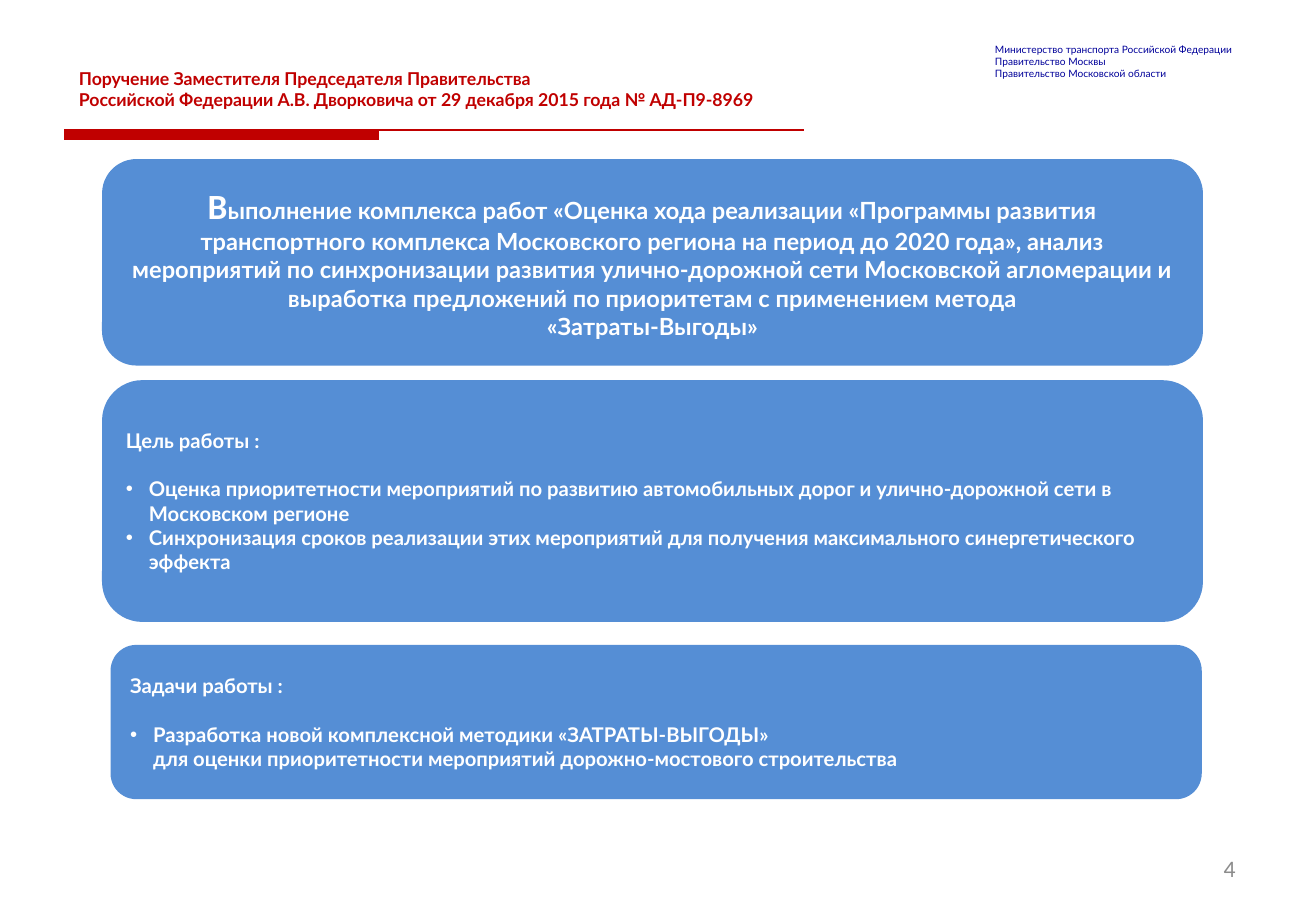
from dataclasses import dataclass

from lxml.etree import SubElement
from pptx import Presentation
from pptx.dml.color import RGBColor
from pptx.enum.shapes import MSO_CONNECTOR as Connector, MSO_SHAPE as Preset
from pptx.enum.text import MSO_ANCHOR as Anchor, MSO_AUTO_SIZE as AutoSize, PP_ALIGN as Align
from pptx.oxml.ns import qn
from pptx.util import Emu, Pt

PX = 9144
RED, NAVY, GREY, WHITE, BLUE = "C00000", "000099", "8C8C8C", "FFFFFF", "558ED5"
BULLET_INDENT = 19


@dataclass(frozen=True)
class Span:
    text: str
    size: float
    color: str = WHITE
    font: str = "Lato"
    bold: bool = True


@dataclass(frozen=True)
class Para:
    spans: tuple[Span, ...]
    align: Align = Align.LEFT
    bullet: bool = False
    before: float = 0


@dataclass(frozen=True)
class Area:
    left: int
    top: int
    width: int
    height: int


@dataclass(frozen=True)
class Panel:
    area: Area
    paras: tuple[Para, ...]
    margins: tuple[int, int] = (10, 5)


@dataclass(frozen=True)
class Rule:
    left: int
    right: int
    y: int
    weight: float


def px(value: int) -> Emu:
    return Emu(value * PX)


def rgb(color: str) -> RGBColor:
    return RGBColor.from_string(color)


def add_bullet(paragraph) -> None:
    properties = paragraph._p.get_or_add_pPr()
    properties.set("marL", str(px(BULLET_INDENT)))
    properties.set("indent", str(-px(BULLET_INDENT)))
    SubElement(properties, qn("a:buFont"), typeface="Arial")
    SubElement(properties, qn("a:buChar"), char="•")


def add_span(paragraph, span: Span) -> None:
    for index, line in enumerate(span.text.split("\n")):
        if index:
            paragraph.add_line_break()
        run = paragraph.add_run()
        run.text = line
        run.font.name = span.font
        run.font.size = Pt(span.size)
        run.font.bold = span.bold
        run.font.color.rgb = rgb(span.color)


def write(shape, paras: tuple[Para, ...], anchor: Anchor, margins: tuple[int, int]) -> None:
    frame = shape.text_frame
    frame.word_wrap = True
    frame.auto_size = AutoSize.NONE
    frame.vertical_anchor = anchor
    frame.margin_left = frame.margin_right = px(margins[0])
    frame.margin_top = frame.margin_bottom = px(margins[1])
    for index, para in enumerate(paras):
        paragraph = frame.add_paragraph() if index else frame.paragraphs[0]
        if para.bullet:
            add_bullet(paragraph)
        paragraph.alignment = para.align
        if para.before:
            paragraph.space_before = Pt(para.before)
        for span in para.spans:
            add_span(paragraph, span)


def place(shape, area: Area) -> None:
    shape.left, shape.top = px(area.left), px(area.top)
    shape.width, shape.height = px(area.width), px(area.height)


def add_text(page, area: Area, paras: tuple[Para, ...], anchor: Anchor, margins: tuple[int, int]) -> None:
    box = page.shapes.add_textbox(0, 0, 0, 0)
    place(box, area)
    write(box, paras, anchor, margins)


def add_panel(page, panel: Panel) -> None:
    box = page.shapes.add_shape(Preset.ROUNDED_RECTANGLE, 0, 0, 0, 0)
    place(box, panel.area)
    box.shadow.inherit = False
    box.fill.solid()
    box.fill.fore_color.rgb = rgb(BLUE)
    box.line.fill.background()
    write(box, panel.paras, Anchor.MIDDLE, panel.margins)


def add_rule(page, rule: Rule) -> None:
    line = page.shapes.add_connector(
        Connector.STRAIGHT, px(rule.left), px(rule.y), px(rule.right), px(rule.y))
    line.line.color.rgb = rgb(RED)
    line.line.width = Pt(rule.weight)
    SubElement(line._element.spPr, qn("a:effectLst"))


def listing(heading: str, *items: str) -> tuple[Para, ...]:
    bullets = tuple(
        Para((Span(item, 12),), bullet=True, before=0 if index else 14.4)
        for index, item in enumerate(items))
    return (Para((Span(heading, 12),)), *bullets)


TITLE = (Para((Span(
    "Поручение Заместителя Председателя Правительства\n"
    "Российской Федерации А.В. Дворковича от 29 декабря 2015 года № АД-П9-8969", 10.5, RED),)),)

AUTHORITIES = tuple(Para((Span(name, 6, NAVY, bold=False),)) for name in (
    "Министерство транспорта Российской Федерации",
    "Правительство Москвы",
    "Правительство Московской области"))

PAGE_NUMBER = (Para((Span("4", 14, GREY, "Calibri", False),), Align.RIGHT),)

RULES = (Rule(53, 662, 107, 1.5), Rule(53, 312, 111, 6))

PANELS = (
    Panel(Area(84, 131, 906, 170), (
        Para((
            Span("В", 21, font="Calibri"),
            Span("ыполнение комплекса работ «Оценка хода реализации «Программы развития "
                 "транспортного комплекса Московского региона на период до 2020 года», анализ "
                 "мероприятий по синхронизации развития улично-дорожной сети Московской агломерации "
                 "и выработка предложений по приоритетам с применением метода", 14)), Align.CENTER),
        Para((Span("«Затраты-Выгоды»", 14),), Align.CENTER)), (12, 6)),
    Panel(Area(84, 313, 906, 199), listing(
        "Цель работы :",
        "Оценка приоритетности мероприятий по развитию автомобильных дорог и "
        "улично-дорожной сети в Московском регионе",
        "Синхронизация сроков реализации этих мероприятий для получения максимального "
        "синергетического эффекта")),
    Panel(Area(91, 531, 898, 127), listing(
        "Задачи работы :",
        "Разработка новой комплексной методики «ЗАТРАТЫ-ВЫГОДЫ»\n"
        "для оценки приоритетности мероприятий дорожно-мостового строительства")),
)


def main() -> None:
    deck = Presentation()
    deck.slide_width, deck.slide_height = px(1083), px(750)
    page = deck.slides.add_slide(deck.slide_layouts[5])
    for rule in RULES:
        add_rule(page, rule)
    add_text(page, Area(809, 31, 220, 40), AUTHORITIES, Anchor.TOP, (10, 5))
    title = page.shapes.title
    place(title, Area(53, 29, 975, 125))
    write(title, TITLE, Anchor.TOP, (12, 27))
    add_text(page, Area(776, 695, 253, 40), PAGE_NUMBER, Anchor.MIDDLE, (12, 6))
    for panel in PANELS:
        add_panel(page, panel)
    deck.save("out.pptx")


if __name__ == "__main__":
    main()
